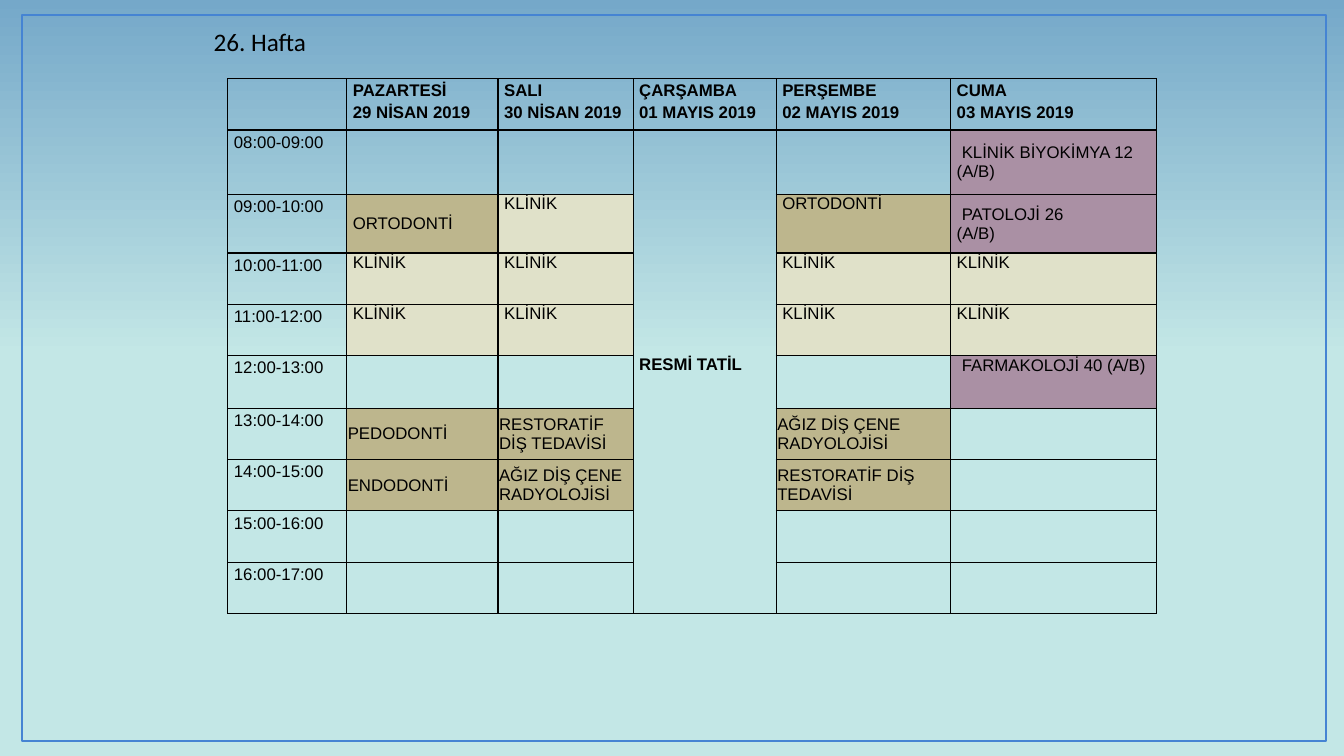
from dataclasses import dataclass

from lxml import etree
from pptx import Presentation
from pptx.dml.color import RGBColor
from pptx.enum.shapes import MSO_SHAPE
from pptx.enum.text import MSO_ANCHOR, MSO_AUTO_SIZE
from pptx.oxml.ns import qn
from pptx.util import Inches, Pt

RECTANGLE = MSO_SHAPE.RECTANGLE
TOP, MIDDLE = MSO_ANCHOR.TOP, MSO_ANCHOR.MIDDLE
FIT_TEXT, NO_FIT = MSO_AUTO_SIZE.SHAPE_TO_FIT_TEXT, MSO_AUTO_SIZE.NONE


@dataclass(frozen=True)
class Theme:
    sky: str = "75A8C9"
    mist: str = "C3E7E6"
    frame: str = "4584D3"
    ink: str = "000000"
    clinic: str = "E0E1C9"
    dental: str = "BDB68D"
    theory: str = "AA90A4"
    title_font: str = "Calibri"
    table_font: str = "Arial"
    title_size: int = 18
    table_size: int = 12


THEME = Theme()


@dataclass(frozen=True)
class Entry:
    text: str = ""
    fill: str = ""
    anchor: MSO_ANCHOR = TOP
    side: float = 0.06
    bottom: float = 0
    indent: float = 0
    spacing: float = 1
    bold: bool = False


def heading(text):
    return Entry(text, spacing=1.15, bold=True)


def hour(start):
    return Entry(f"{start:02}:00-{start + 1:02}:00", spacing=1.15)


def dental(text, side=0.01, anchor=MIDDLE):
    return Entry(text, THEME.dental, anchor, side)


def theory(text, anchor=MIDDLE):
    return Entry(text, THEME.theory, anchor, indent=0.05)


FREE = Entry()
CLINIC = Entry("KLİNİK", THEME.clinic)
HOLIDAY = Entry("RESMİ TATİL", anchor=MIDDLE, bottom=0.14, bold=True)
RADIOLOGY = dental("AĞIZ DİŞ ÇENE RADYOLOJİSİ")
RESTORATIVE = dental("RESTORATİF DİŞ TEDAVİSİ")

HEADINGS = [
    "",
    "PAZARTESİ\n29 NİSAN 2019",
    "SALI\n30 NİSAN 2019",
    "ÇARŞAMBA\n01 MAYIS 2019",
    "PERŞEMBE\n02 MAYIS 2019",
    "CUMA\n03 MAYIS 2019",
]
LESSONS = [
    [FREE, FREE, HOLIDAY, FREE, theory("KLİNİK BİYOKİMYA 12 (A/B)")],
    [dental("ORTODONTİ", 0.06), CLINIC, FREE,
     dental("ORTODONTİ", 0.06, TOP), theory("PATOLOJİ 26\n(A/B)")],
    [CLINIC, CLINIC, FREE, CLINIC, CLINIC],
    [CLINIC, CLINIC, FREE, CLINIC, CLINIC],
    [FREE, FREE, FREE, FREE, theory("FARMAKOLOJİ 40 (A/B)", TOP)],
    [dental("PEDODONTİ"), RESTORATIVE, FREE, RADIOLOGY, FREE],
    [dental("ENDODONTİ"), RADIOLOGY, FREE, RESTORATIVE, FREE],
    [FREE] * 5,
    [FREE] * 5,
]
DAY_WIDTHS = [1.18, 1.5, 1.34, 1.42, 1.73, 2.04]
HOUR_HEIGHTS = [0.51, 0.64, 0.58, 0.51, 0.51, 0.52, 0.51, 0.51, 0.51, 0.51]


class TimetableSlide:
    def __init__(self, slide, theme):
        self.slide = slide
        self.theme = theme

    def background(self):
        fill = self.slide.background.fill
        fill.gradient()
        fill.gradient_angle = 90
        stops = [(0.53, self.theme.mist), (1, self.theme.sky)]
        for stop, (position, color) in zip(fill.gradient_stops, stops):
            stop.position = position
            stop.color.rgb = RGBColor.from_string(color)

    def frame(self, left, top, width, height):
        frame = self.slide.shapes.add_shape(
            RECTANGLE, Inches(left), Inches(top), Inches(width), Inches(height))
        frame.shadow.inherit = False
        frame.fill.background()
        frame.line.color.rgb = RGBColor.from_string(self.theme.frame)
        frame.line.width = Pt(1.5)

    def style(self, paragraph, font, size, bold=False):
        paragraph.font.name = font
        paragraph.font.size = Pt(size)
        paragraph.font.bold = bold
        paragraph.font.color.rgb = RGBColor.from_string(self.theme.ink)

    def title(self, text, left, top, width, height):
        box = self.slide.shapes.add_textbox(
            Inches(left), Inches(top), Inches(width), Inches(height))
        box.text_frame.word_wrap = False
        box.text_frame.auto_size = FIT_TEXT
        box.text_frame.text = text
        self.style(box.text_frame.paragraphs[0],
                   self.theme.title_font, self.theme.title_size)

    def borders(self, cell):
        properties = cell._tc.get_or_add_tcPr()
        for side in ("a:lnL", "a:lnR", "a:lnT", "a:lnB"):
            line = etree.SubElement(properties, qn(side), w=str(Pt(1)))
            solid = etree.SubElement(line, qn("a:solidFill"))
            etree.SubElement(solid, qn("a:srgbClr"), val=self.theme.ink)

    def cell(self, cell, entry):
        self.borders(cell)
        if entry.fill:
            cell.fill.solid()
            cell.fill.fore_color.rgb = RGBColor.from_string(entry.fill)
        else:
            cell.fill.background()
        cell.margin_left = cell.margin_right = Inches(entry.side)
        cell.margin_top = 0
        cell.margin_bottom = Inches(entry.bottom)
        cell.vertical_anchor = entry.anchor
        cell.text_frame.text = entry.text
        for paragraph in cell.text_frame.paragraphs:
            paragraph.line_spacing = entry.spacing
            self.style(paragraph, self.theme.table_font,
                       self.theme.table_size, entry.bold)
        if entry.indent:
            first = cell.text_frame.paragraphs[0]._p.get_or_add_pPr()
            first.set("indent", str(Inches(entry.indent)))

    def timetable(self, entries, widths, heights, left, top):
        table = self.slide.shapes.add_table(
            len(heights), len(widths), Inches(left), Inches(top),
            Inches(sum(widths)), Inches(sum(heights))).table
        table.first_row = False
        table.horz_banding = False
        for column, width in zip(table.columns, widths):
            column.width = Inches(width)
        for row, height, row_entries in zip(table.rows, heights, entries):
            row.height = Inches(height)
            for cell, entry in zip(row.cells, row_entries):
                self.cell(cell, entry)
        table.cell(1, 3).merge(table.cell(len(heights) - 1, 3))


def main():
    presentation = Presentation()
    presentation.slide_width = Inches(13.33)
    presentation.slide_height = Inches(7.5)
    blank = presentation.slide_layouts[6]
    week = TimetableSlide(presentation.slides.add_slide(blank), THEME)

    week.background()
    week.frame(0.22, 0.15, 12.93, 7.2)
    entries = [[heading(day) for day in HEADINGS]]
    entries += [[hour(start), *lessons]
                for start, lessons in enumerate(LESSONS, 8)]
    week.timetable(entries, DAY_WIDTHS, HOUR_HEIGHTS, 2.26, 0.78)
    week.title("26. Hafta", 2.02, 0.21, 1.14, 0.4)
    presentation.save("out.pptx")


if __name__ == "__main__":
    main()
